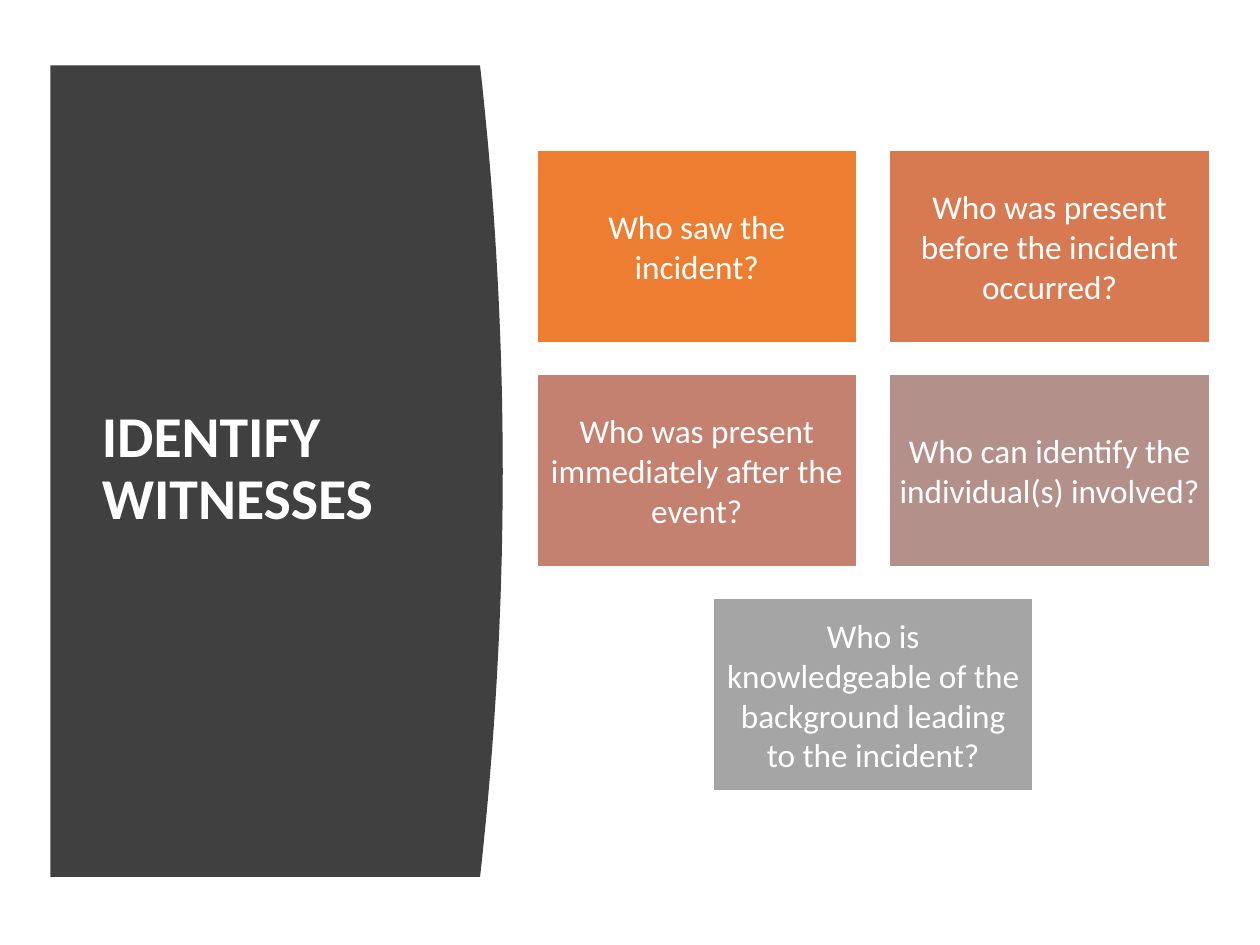
from dataclasses import dataclass

from pptx import Presentation
from pptx.dml.color import RGBColor
from pptx.enum.shapes import MSO_SHAPE
from pptx.enum.text import MSO_ANCHOR, PP_ALIGN
from pptx.util import Inches, Pt


@dataclass(frozen=True)
class Theme:
    font: str = "Calibri"
    panel: str = "404040"
    light: str = "FFFFFF"
    cards: tuple = ("ED7D31", "D87A51", "C48170", "B4908B", "A5A5A5")
    title_size: int = 33
    card_size: int = 19


THEME = Theme()
TITLE = "IDENTIFY WITNESSES"
QUESTIONS = (
    "Who saw the incident?",
    "Who was present before the incident occurred?",
    "Who was present immediately after the event?",
    "Who can identify the individual(s) involved?",
    "Who is knowledgeable of the background leading to the incident?",
)


def paint(shape, fill, line=None):
    shape.shadow.inherit = False
    shape.fill.solid()
    shape.fill.fore_color.rgb = RGBColor.from_string(fill)
    if line:
        shape.line.color.rgb = RGBColor.from_string(line)
        shape.line.width = Pt(1)
    else:
        shape.line.fill.background()


def write(shape, text, *, size, bold=False, align=PP_ALIGN.LEFT,
          spacing=1.0, inset_x=0.1, inset_y=0.05):
    frame = shape.text_frame
    frame.word_wrap = True
    frame.vertical_anchor = MSO_ANCHOR.MIDDLE
    frame.margin_left = frame.margin_right = Inches(inset_x)
    frame.margin_top = frame.margin_bottom = Inches(inset_y)
    paragraph = frame.paragraphs[0]
    paragraph.alignment = align
    paragraph.line_spacing = spacing
    run = paragraph.add_run()
    run.text = text
    run.font.name = THEME.font
    run.font.size = Pt(size)
    run.font.bold = bold
    run.font.color.rgb = RGBColor.from_string(THEME.light)


def add_title_panel(slide, left, top, width, height, bulge=0.18, steps=48):
    """Panel whose right edge bows outward as a parabola, with the title on it."""
    edge = left + width - bulge
    curve = []
    for step in range(steps + 1):
        offset = 2 * step / steps - 1
        curve.append((Inches(edge + bulge * (1 - offset ** 2)),
                      Inches(top + height * step / steps)))
    builder = slide.shapes.build_freeform(Inches(left), Inches(top))
    builder.add_line_segments(curve + [(Inches(left), Inches(top + height))])
    paint(builder.convert_to_shape(), THEME.panel)

    title = slide.shapes.add_textbox(Inches(left + 0.31), Inches(top + 0.59),
                                     Inches(2.8), Inches(height - 1.2))
    write(title, TITLE, size=THEME.title_size, bold=True, spacing=0.9)


def add_question_grid(slide, left, top, width, height, columns=2, gap_x=0.26, gap_y=0.25):
    """Cards in rows of equal size; a short last row is centred."""
    rows = -(-len(QUESTIONS) // columns)
    card_width = (width - gap_x * (columns - 1)) / columns
    card_height = (height - gap_y * (rows - 1)) / rows
    for index, (question, color) in enumerate(zip(QUESTIONS, THEME.cards)):
        row, column = divmod(index, columns)
        missing = columns - min(columns, len(QUESTIONS) - row * columns)
        card = slide.shapes.add_shape(
            MSO_SHAPE.RECTANGLE,
            Inches(left + (column + missing / 2) * (card_width + gap_x)),
            Inches(top + row * (card_height + gap_y)),
            Inches(card_width), Inches(card_height))
        paint(card, color, THEME.light)
        write(card, question, size=THEME.card_size, align=PP_ALIGN.CENTER,
              inset_x=0.08, inset_y=0.08)


def main():
    presentation = Presentation()
    presentation.slide_width = Inches(10)
    presentation.slide_height = Inches(7.5)
    slide = presentation.slides.add_slide(presentation.slide_layouts[6])
    add_title_panel(slide, 0.4, 0.52, 3.59, 6.44)
    add_question_grid(slide, 4.26, 1.19, 5.34, 5.09)
    presentation.save("out.pptx")


if __name__ == "__main__":
    main()
